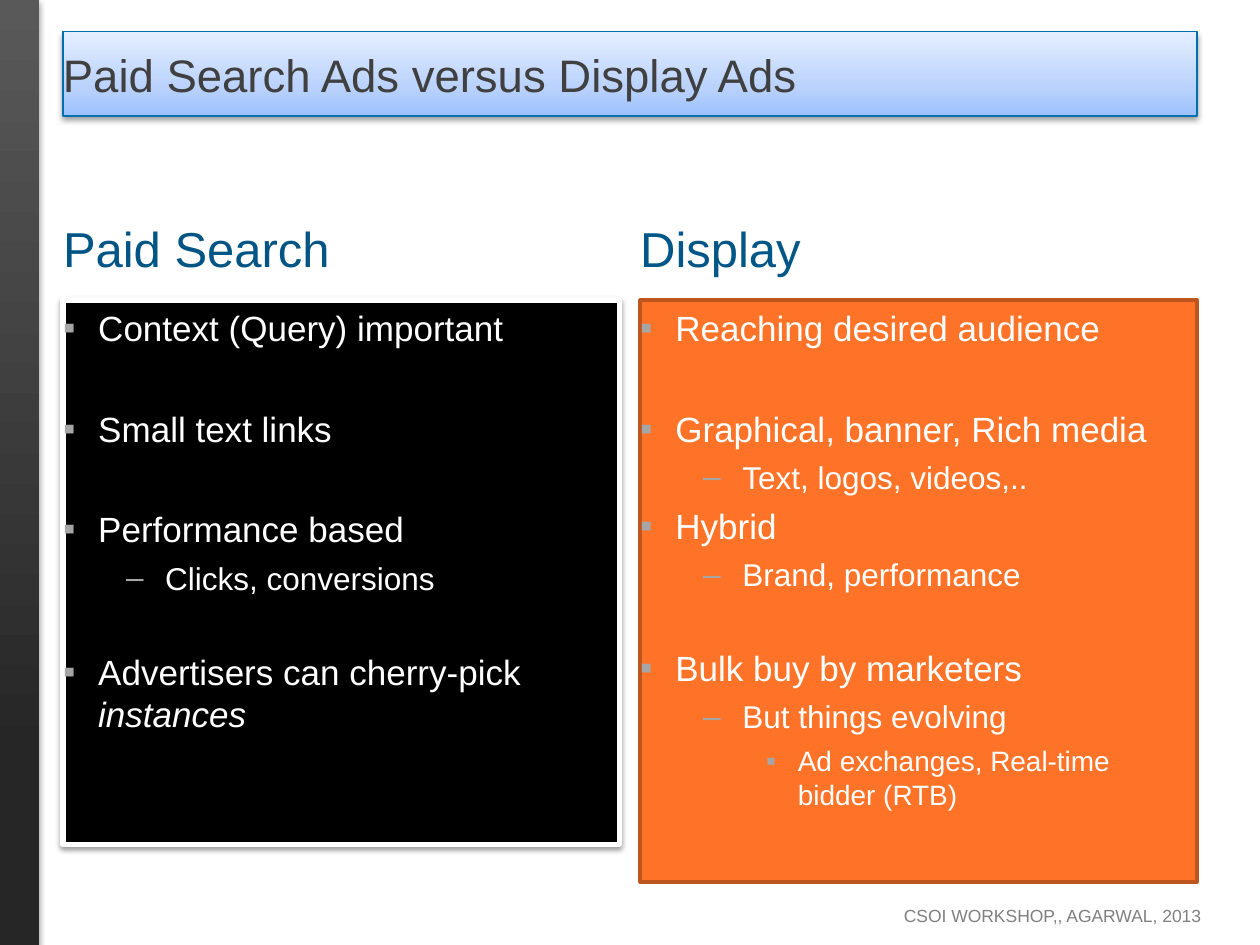
from lxml.etree import SubElement
from pptx import Presentation
from pptx.dml.color import RGBColor as Rgb
from pptx.enum.shapes import MSO_SHAPE as Shape
from pptx.enum.text import MSO_ANCHOR as Anchor, PP_ALIGN as Align
from pptx.oxml.ns import qn
from pptx.util import Cm, Pt

THEME = {
    "font": "Arial",
    "title": "404040", "footer": "808080", "body": "FFFFFF", "bullet": "A6A6A6",
    "title_size": 26, "heading_size": 28, "footer_size": 10,
    "level_sizes": [20, 18, 16],
    "bar_stops": [(20, "262626"), (100, "595959")],
    "title_stops": [(0, "9CC1FD"), (35, "BBD3FC"), (100, "E4EEFF")],
    "title_line": "006FAE",
}

# Content: bullets are (level, text, italic ending, starts a new group)
TITLE = "Paid Search Ads versus Display Ads"
FOOTER = "CSOI WORKSHOP,, AGARWAL, 2013"
COLUMNS = [
    {"heading": "Paid Search", "color": "005585", "fill": "000000",
     "line": ("FFFFFF", 3), "shadow": True, "height": 10.97,
     "bullets": [
         (0, "Context (Query) important", "", False),
         (0, "Small text links", "", True),
         (0, "Performance based", "", True),
         (1, "Clicks, conversions", "", False),
         (0, "Advertisers can cherry-pick ", "instances", True)]},
    {"heading": "Display", "color": "005686", "fill": "FF7328",
     "line": ("BD551E", 2), "shadow": False, "height": 11.73,
     "bullets": [
         (0, "Reaching desired audience", "", False),
         (0, "Graphical, banner, Rich media", "", True),
         (1, "Text, logos, videos,..", "", False),
         (0, "Hybrid", "", False),
         (1, "Brand, performance", "", False),
         (0, "Bulk buy by marketers", "", True),
         (1, "But things evolving", "", False),
         (2, "Ad exchanges, Real-time bidder (RTB)", "", False)]},
]

# Layout in centimetres
PAGE_WIDTH, PAGE_HEIGHT = 25.4, 19.05
MARGIN, GAP = 1.27, 0.41
CONTENT_WIDTH = PAGE_WIDTH - 2 * MARGIN
COLUMN_WIDTH = (CONTENT_WIDTH - GAP) / 2
HEADING_TOP, HEADING_HEIGHT = 4.27, 1.78
LEVELS = [("▪", 0.71, 0.71), ("–", 2.06, 0.79), ("▪", 3.18, 0.64)]  # mark, margin, hanging
LINE_GAP = 5
GROUP_GAPS = [33.5, 30.7]  # points, by level of the bullet above


def place(page, left, top, width, height, shape=None):
    area = [Cm(value) for value in (left, top, width, height)]
    if shape is None:
        box = page.shapes.add_textbox(*area)
    else:
        box = page.shapes.add_shape(shape, *area)
        box.shadow.inherit = False
        box.line.fill.background()
    frame = box.text_frame
    frame.word_wrap = True
    frame.vertical_anchor = Anchor.TOP
    frame.margin_left, frame.margin_right = 0, Cm(0.25)
    frame.margin_top = frame.margin_bottom = Cm(0.13)
    return box


def outline(box, color, width):
    box.line.color.rgb = Rgb.from_string(color)
    box.line.width = Pt(width)


def gradient(box, stops):
    """Fill from bottom to top with (percent, colour) stops."""
    box.fill.gradient()
    box.fill.gradient_angle = 90
    stop_list = box._element.spPr.find(".//" + qn("a:gsLst"))
    for stop in list(stop_list):
        stop_list.remove(stop)
    for percent, color in stops:
        stop = SubElement(stop_list, qn("a:gs"), pos=str(percent * 1000))
        SubElement(stop, qn("a:srgbClr"), val=color)


def cast_shadow(box, opacity=38, distance=1.6):
    effects = box._element.spPr.find(qn("a:effectLst"))
    shadow = SubElement(effects, qn("a:outerShdw"), blurRad=str(Pt(3.1)),
                        dist=str(Pt(distance)), dir="5400000", rotWithShape="0")
    color = SubElement(shadow, qn("a:srgbClr"), val="000000")
    SubElement(color, qn("a:alpha"), val=str(opacity * 1000))


def write(box, text, *, size, color, align=Align.LEFT, ending="", level=None,
          before=0, first=True):
    frame = box.text_frame
    para = frame.paragraphs[0] if first else frame.add_paragraph()
    para.alignment = align
    para.space_before = Pt(before)
    if level is not None:
        mark, margin, hanging = LEVELS[level]
        para.level = level
        props = para._p.get_or_add_pPr()
        props.set("marL", str(Cm(margin)))
        props.set("indent", str(-Cm(hanging)))
        mark_color = SubElement(props, qn("a:buClr"))
        SubElement(mark_color, qn("a:srgbClr"), val=THEME["bullet"])
        SubElement(props, qn("a:buFont"), typeface=THEME["font"])
        SubElement(props, qn("a:buChar"), char=mark)
    for words, italic in ((text, False), (ending, True)):
        if words:
            span = para.add_run()
            span.text = words
            span.font.name = THEME["font"]
            span.font.size = Pt(size)
            span.font.italic = italic
            span.font.color.rgb = Rgb.from_string(color)


def add_column(page, left, column):
    heading = place(page, left, HEADING_TOP, COLUMN_WIDTH, HEADING_HEIGHT)
    write(heading, column["heading"], size=THEME["heading_size"], color=column["color"])

    panel = place(page, left, HEADING_TOP + HEADING_HEIGHT, COLUMN_WIDTH,
                  column["height"], Shape.RECTANGLE)
    panel.fill.solid()
    panel.fill.fore_color.rgb = Rgb.from_string(column["fill"])
    outline(panel, *column["line"])
    if column["shadow"]:
        cast_shadow(panel)

    previous = None
    for level, text, ending, new_group in column["bullets"]:
        first = previous is None
        before = 0 if first else GROUP_GAPS[previous] if new_group else LINE_GAP
        write(panel, text, ending=ending, level=level, before=before, first=first,
              size=THEME["level_sizes"][level], color=THEME["body"])
        previous = level


def main():
    deck = Presentation()
    deck.slide_width, deck.slide_height = Cm(PAGE_WIDTH), Cm(PAGE_HEIGHT)
    page = deck.slides.add_slide(deck.slide_layouts[6])

    # Side bar
    bar = place(page, 0, 0, 0.79, PAGE_HEIGHT, Shape.RECTANGLE)
    gradient(bar, THEME["bar_stops"])
    cast_shadow(bar, opacity=35, distance=1.8)

    # Footer
    footer = place(page, 11.1, 18.11, 13.36, 0.89)
    write(footer, FOOTER, size=THEME["footer_size"], color=THEME["footer"],
          align=Align.RIGHT)

    # Title
    title = place(page, MARGIN, 0.64, CONTENT_WIDTH, 1.7, Shape.RECTANGLE)
    gradient(title, THEME["title_stops"])
    outline(title, THEME["title_line"], 0.75)
    cast_shadow(title)
    title.text_frame.vertical_anchor = Anchor.MIDDLE
    write(title, TITLE, size=THEME["title_size"], color=THEME["title"])

    # Columns
    for index, column in enumerate(COLUMNS):
        add_column(page, MARGIN + index * (COLUMN_WIDTH + GAP), column)

    deck.save("out.pptx")


if __name__ == "__main__":
    main()
